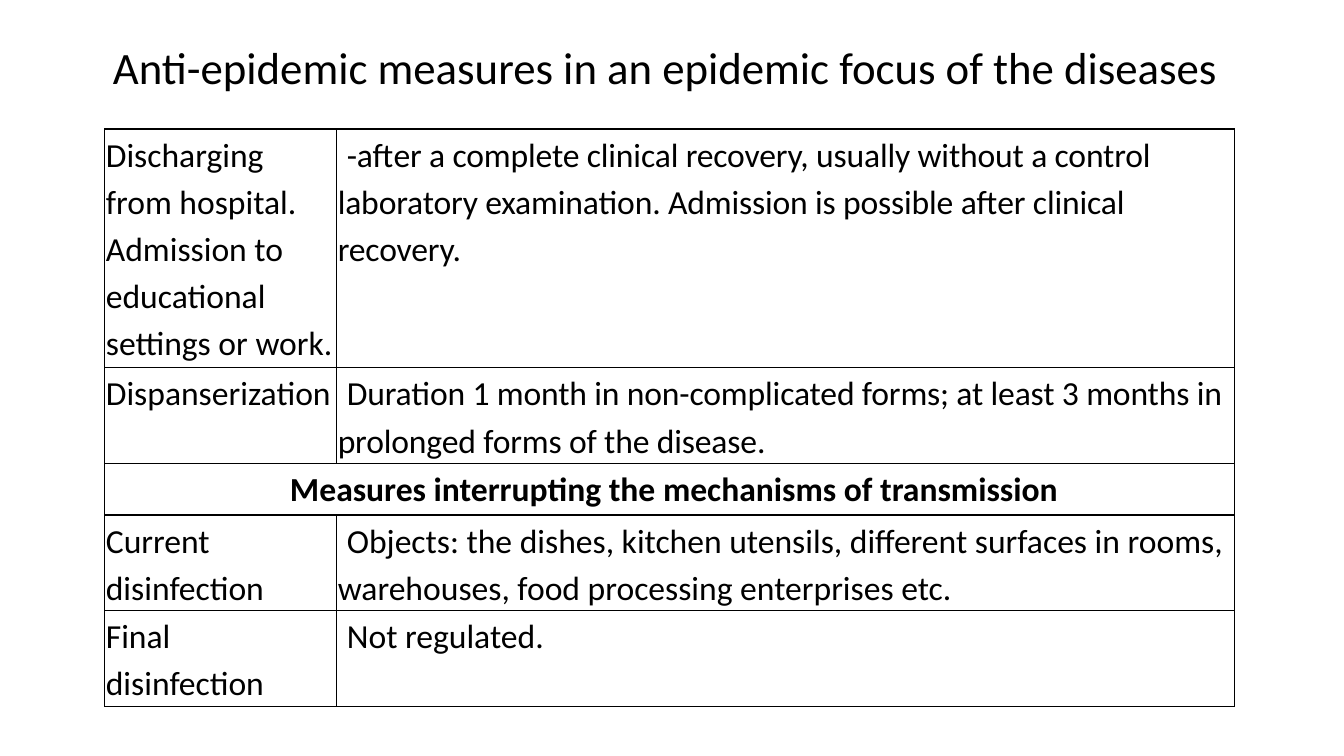
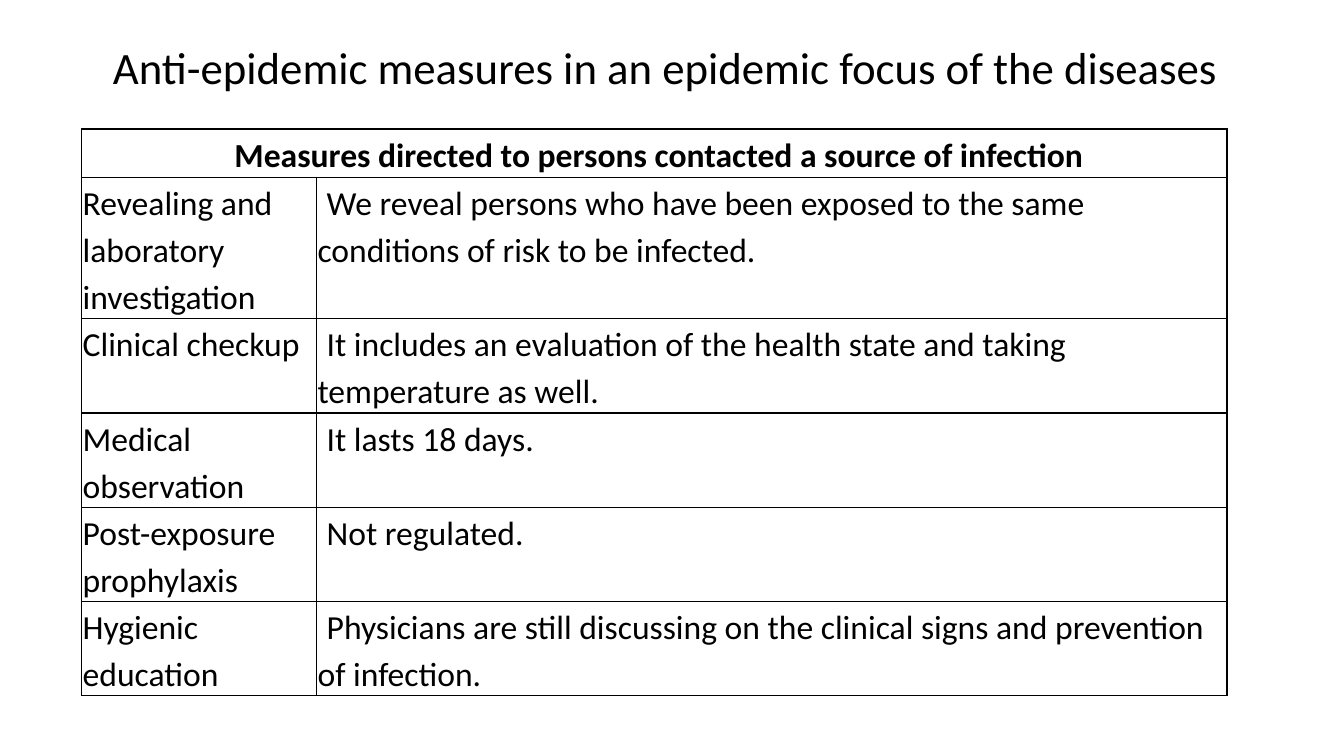
from dataclasses import dataclass

from lxml.etree import SubElement
from pptx import Presentation
from pptx.dml.color import RGBColor
from pptx.enum.text import MSO_ANCHOR as Anchor, MSO_AUTO_SIZE as AutoSize, PP_ALIGN as Align
from pptx.oxml.ns import qn
from pptx.util import Inches, Pt


@dataclass(frozen=True)
class Theme:
    font: str = "Calibri"
    ink: RGBColor = RGBColor(0, 0, 0)
    paper: RGBColor = RGBColor(255, 255, 255)
    title_size: int = 32
    table_size: int = 24
    title_spacing: float = 0.9
    table_spacing: float = 1.15
    border: int = 1
    cell_inset: float = 0.01
    first_line_indent: float = 0.09


@dataclass(frozen=True)
class Measure:
    """A table row; without a detail it is a heading across both columns."""
    height: float
    label: str
    detail: str = ""
    tracking: float = 0


THEME = Theme()
TITLE = "Anti-epidemic measures in an epidemic focus of the diseases"
TITLE_BOX = (1.02, 0.4, 11.4, 1.06)

# Each slide: left, top, column widths, rows
SLIDES = [
    (1.04, 1.28, (2.3, 8.9), [
        Measure(2.37, "Discharging from hospital. Admission to educational settings or work.",
                "-after a complete clinical recovery, usually without a control laboratory "
                "examination. Admission is possible after clinical recovery.", -0.1),
        Measure(0.95, "Dispanserization",
                "Duration 1 month in non-complicated forms; at least 3 months in prolonged "
                "forms of the disease.", -0.1),
        Measure(0.51, "Measures interrupting the mechanisms of transmission"),
        Measure(0.95, "Current disinfection",
                "Objects: the dishes, kitchen utensils, different surfaces in rooms, "
                "warehouses, food processing enterprises etc."),
        Measure(0.95, "Final disinfection", "Not regulated."),
    ]),
    (0.81, 1.28, (2.33, 9.03), [
        Measure(0.48, "Measures directed to persons contacted a source of infection"),
        Measure(1.36, "Revealing and laboratory investigation",
                "We reveal persons who have been exposed to the same conditions of risk "
                "to be infected."),
        Measure(0.91, "Clinical checkup",
                "It includes an evaluation of the health state and taking temperature as well."),
        Measure(0.91, "Medical observation", "It lasts 18 days."),
        Measure(0.91, "Post-exposure prophylaxis", "Not regulated."),
        Measure(0.91, "Hygienic education",
                "Physicians are still discussing on the clinical signs and prevention "
                "of infection."),
    ]),
]


def write_text(frame, text, *, size, spacing, align=Align.LEFT, bold=False,
               indent=0, tracking=0):
    paragraph = frame.paragraphs[0]
    paragraph.alignment = align
    paragraph.line_spacing = spacing
    paragraph.space_before = paragraph.space_after = Pt(0)
    if indent:
        properties = paragraph._p.get_or_add_pPr()
        properties.set("marL", "0")
        properties.set("indent", str(Inches(indent)))
    run = paragraph.add_run()
    run.text = text
    run.font.name = THEME.font
    run.font.size = Pt(size)
    run.font.bold = bold
    run.font.color.rgb = THEME.ink
    if tracking:
        run._r.get_or_add_rPr().set("spc", str(round(tracking * 100)))


def style_cell(cell):
    cell.margin_left = cell.margin_right = Inches(THEME.cell_inset)
    cell.margin_top = cell.margin_bottom = 0
    cell.vertical_anchor = Anchor.TOP
    # Borders precede the fill in the cell properties
    properties = cell._tc.get_or_add_tcPr()
    for side in ("a:lnL", "a:lnR", "a:lnT", "a:lnB"):
        line = SubElement(properties, qn(side), w=str(Pt(THEME.border)))
        SubElement(SubElement(line, qn("a:solidFill")), qn("a:srgbClr"), val=str(THEME.ink))
    cell.fill.solid()
    cell.fill.fore_color.rgb = THEME.paper


def add_title(slide, box):
    title = slide.shapes.title
    title.left, title.top, title.width, title.height = map(Inches, box)
    frame = title.text_frame
    frame.word_wrap = True
    frame.auto_size = AutoSize.NONE
    frame.vertical_anchor = Anchor.TOP
    write_text(frame, TITLE, size=THEME.title_size, spacing=THEME.title_spacing)


def add_measures(slide, left, top, widths, measures):
    box = (left, top, sum(widths), sum(m.height for m in measures))
    table = slide.shapes.add_table(len(measures), len(widths), *map(Inches, box)).table
    table.first_row = table.horz_banding = False
    for column, width in zip(table.columns, widths):
        column.width = Inches(width)

    body = dict(size=THEME.table_size, spacing=THEME.table_spacing)
    for index, measure in enumerate(measures):
        table.rows[index].height = Inches(measure.height)
        label, detail = table.cell(index, 0), table.cell(index, 1)
        for cell in (label, detail):
            style_cell(cell)
        if measure.detail:
            write_text(label.text_frame, measure.label, **body)
            write_text(detail.text_frame, measure.detail, **body,
                       indent=THEME.first_line_indent, tracking=measure.tracking)
        else:
            label.merge(detail)
            write_text(label.text_frame, measure.label, **body, bold=True,
                       align=Align.CENTER, indent=THEME.first_line_indent)


def main():
    deck = Presentation()
    deck.slide_width, deck.slide_height = Inches(13.33), Inches(7.5)
    title_only = deck.slide_layouts[5]
    for left, top, widths, measures in SLIDES:
        slide = deck.slides.add_slide(title_only)
        add_title(slide, TITLE_BOX)
        add_measures(slide, left, top, widths, measures)
    deck.save("out.pptx")


if __name__ == "__main__":
    main()
